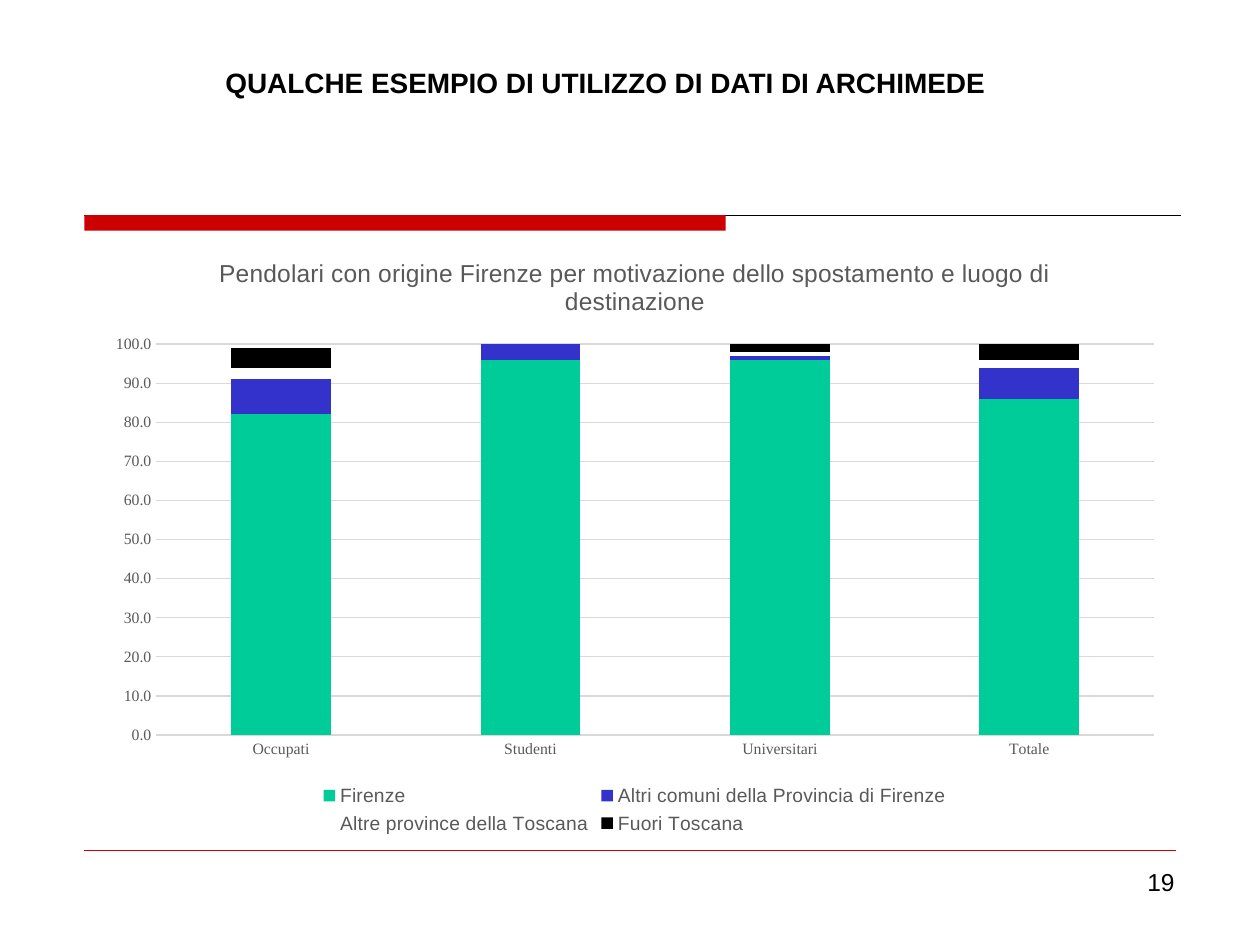
import pptx
import pptx.chart.data
import pptx.dml.color
import pptx.enum.chart
import pptx.enum.shapes
import pptx.enum.text
import pptx.oxml
import pptx.util
from pptx.util import Cm

CATEGORIES = ["Occupati", "Studenti", "Universitari", "Totale"]
DESTINATIONS = [
    ("Firenze", [82, 96, 96, 86], "00CC99"),
    ("Altri comuni della Provincia di Firenze", [9, 4, 1, 8], "3333CC"),
    ("Altre province della Toscana", [3, 0, 1, 2], "FFFFFF"),
    ("Fuori Toscana", [5, 0, 2, 4], "000000"),
]


def color(value):
    return pptx.dml.color.RGBColor.from_string(value)


def set_font(font, name, size, value, bold=False):
    font.name = name
    font.size = pptx.util.Pt(size)
    font.bold = bold
    font.color.rgb = color(value)


def set_line(line, value, width):
    line.color.rgb = color(value)
    line.width = pptx.util.Pt(width)


def place(shape, left, top, width, height):
    shape.left, shape.top = Cm(left), Cm(top)
    shape.width, shape.height = Cm(width), Cm(height)


def add_text(frame, text, size, alignment, bold=False):
    paragraph = frame.paragraphs[0]
    paragraph.alignment = alignment
    run = paragraph.add_run()
    run.text = text
    set_font(run.font, "Arial", size, "000000", bold)


def set_title(slide, text):
    title = slide.shapes.title
    place(title, 4.29, 1.19, 16.03, 0.94)
    frame = title.text_frame
    frame.word_wrap = False
    frame.auto_size = pptx.enum.text.MSO_AUTO_SIZE.SHAPE_TO_FIT_TEXT
    frame.vertical_anchor = pptx.enum.text.MSO_ANCHOR.TOP
    add_text(frame, text, 16, pptx.enum.text.PP_ALIGN.LEFT, bold=True)


def add_rule(slide, left, right, top, value, width):
    rule = slide.shapes.add_connector(
        pptx.enum.shapes.MSO_CONNECTOR.STRAIGHT, Cm(left), Cm(top), Cm(right), Cm(top)
    )
    set_line(rule.line, value, width)
    rule._element.spPr.append(pptx.oxml.parse_xml(
        '<a:effectLst xmlns:a="http://schemas.openxmlformats.org/drawingml/2006/main"/>'
    ))


def add_bar(slide, left, top, width, height, value):
    bar = slide.shapes.add_shape(
        pptx.enum.shapes.MSO_SHAPE.RECTANGLE, Cm(left), Cm(top), Cm(width), Cm(height)
    )
    bar.shadow.inherit = False
    bar.fill.solid()
    bar.fill.fore_color.rgb = color(value)
    bar.line.fill.background()


def add_page_number(slide, text):
    box = slide.shapes.add_textbox(Cm(20.09), Cm(17.35), Cm(3.84), Cm(1.32))
    box.text_frame.word_wrap = True
    add_text(box.text_frame, text, 14, pptx.enum.text.PP_ALIGN.RIGHT)


def format_axes(chart):
    for axis in (chart.category_axis, chart.value_axis):
        axis.major_tick_mark = pptx.enum.chart.XL_TICK_MARK.NONE
        axis.minor_tick_mark = pptx.enum.chart.XL_TICK_MARK.NONE
        set_font(axis.tick_labels.font, "Times New Roman", 9, "595959")
    set_line(chart.category_axis.format.line, "D9D9D9", 0.75)
    values = chart.value_axis
    values.minimum_scale = 0
    values.maximum_scale = 100
    values.major_unit = 10
    values.tick_labels.number_format = "0.0"
    values.tick_labels.number_format_is_linked = False
    values.format.line.fill.background()
    set_line(values.major_gridlines.format.line, "D9D9D9", 0.75)


def add_commuter_chart(slide, title):
    data = pptx.chart.data.CategoryChartData(number_format="0.0")
    data.categories = CATEGORIES
    for name, shares, _ in DESTINATIONS:
        data.add_series(name, shares)
    chart = slide.shapes.add_chart(
        pptx.enum.chart.XL_CHART_TYPE.COLUMN_STACKED,
        Cm(1.9), Cm(4.72), Cm(21.8), Cm(12.2), data,
    ).chart
    set_font(chart.font, "Times New Roman", 10, "000000")
    chart.has_title = True
    run = chart.chart_title.text_frame.paragraphs[0].add_run()
    run.text = title
    set_font(run.font, "Arial", 14, "595959")
    chart.chart_title.include_in_layout = False
    chart.has_legend = True
    chart.legend.position = pptx.enum.chart.XL_LEGEND_POSITION.BOTTOM
    chart.legend.include_in_layout = False
    set_font(chart.legend.font, "Arial", 11, "595959")
    format_axes(chart)
    plot = chart.plots[0]
    plot.gap_width = 150
    plot.overlap = 100
    plot.vary_by_categories = False
    for series, (_, _, value) in zip(plot.series, DESTINATIONS):
        series.format.fill.solid()
        series.format.fill.fore_color.rgb = color(value)


def main():
    presentation = pptx.Presentation()
    presentation.slide_width = Cm(25.4)
    presentation.slide_height = Cm(19.05)
    slide = presentation.slides.add_slide(presentation.slide_layouts[5])
    add_rule(slide, 1.7, 23.8, 4.34, "000000", 0.75)
    add_bar(slide, 1.7, 4.34, 12.93, 0.31, "CC0000")
    add_rule(slide, 1.7, 23.7, 17.15, "CC0000", 0.25)
    set_title(slide, "QUALCHE ESEMPIO DI UTILIZZO DI DATI DI ARCHIMEDE")
    add_page_number(slide, "19")
    add_commuter_chart(
        slide,
        "Pendolari con origine Firenze per motivazione dello spostamento e luogo di destinazione",
    )
    presentation.save("out.pptx")


if __name__ == "__main__":
    main()
